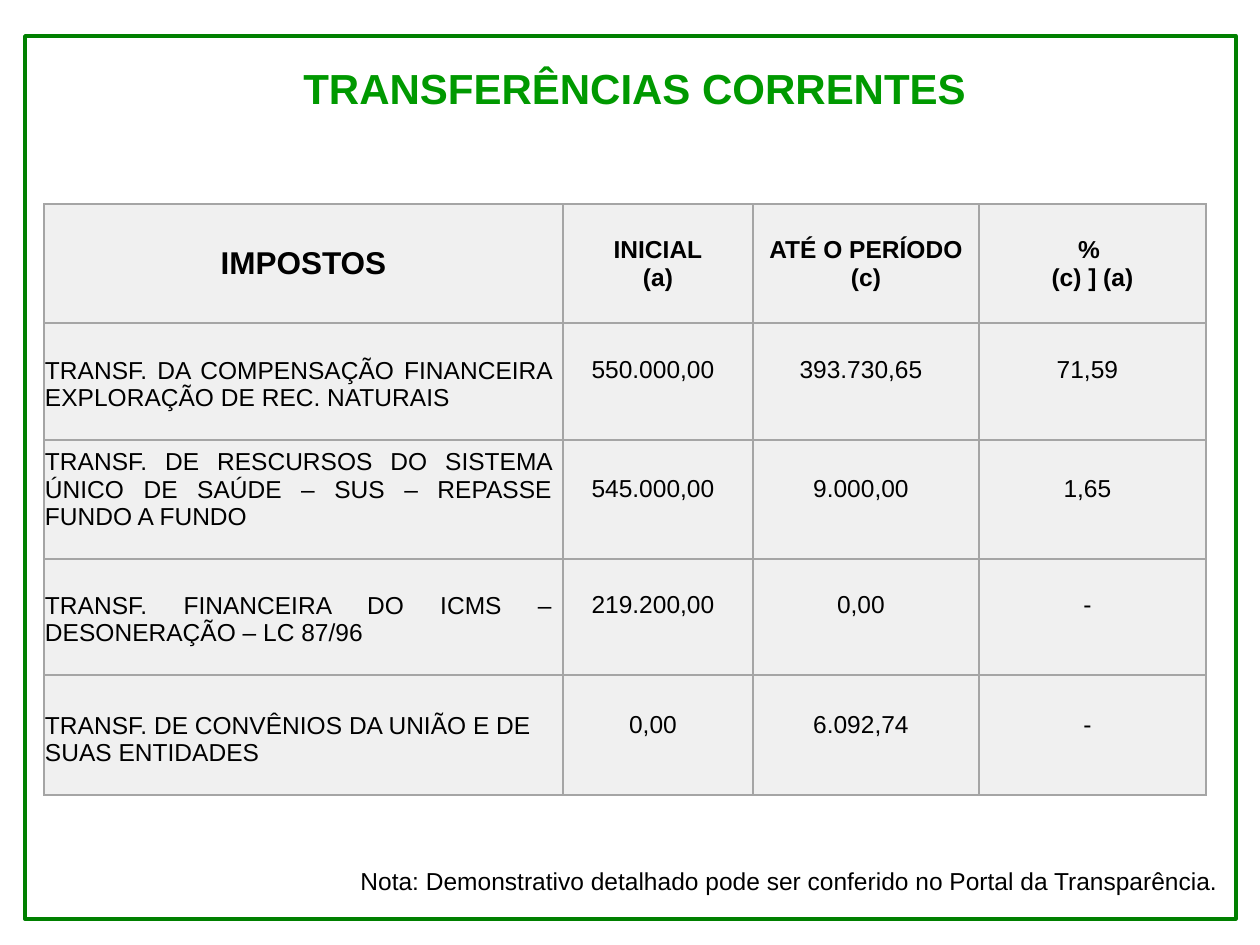
from lxml.etree import SubElement
from pptx import Presentation
from pptx.dml.color import RGBColor
from pptx.enum.shapes import MSO_SHAPE
from pptx.enum.text import MSO_ANCHOR, MSO_AUTO_SIZE, PP_ALIGN
from pptx.oxml.ns import qn
from pptx.util import Emu, Pt

PAGE_WIDTH, PAGE_HEIGHT = 1260, 945
LINE_HEIGHT = 28
COLUMN_WIDTHS = [519, 190, 226, 227]
ROW_HEIGHTS = [119, 117, 119, 116, 120]
HEADERS = ["IMPOSTOS", "INICIAL\n(a)", "ATÉ O PERÍODO (c)", "% \n(c) ] (a)"]
TRANSFERS = [
    ("TRANSF. DA COMPENSAÇÃO FINANCEIRA EXPLORAÇÃO DE REC. NATURAIS",
     "550.000,00", "393.730,65", "71,59"),
    ("TRANSF. DE RESCURSOS DO SISTEMA ÚNICO DE SAÚDE – SUS – REPASSE FUNDO A FUNDO",
     "545.000,00", "9.000,00", "1,65"),
    ("TRANSF. FINANCEIRA DO ICMS – DESONERAÇÃO – LC 87/96",
     "219.200,00", "0,00", "-"),
    ("TRANSF. DE CONVÊNIOS DA UNIÃO E DE SUAS ENTIDADES",
     "0,00", "6.092,74", "-"),
]


def px(length):
    return Emu(round(length * 914400 / 126))


def color(hex_value):
    return RGBColor.from_string(hex_value)


def write(text_frame, text, size, hex_value="000000", bold=False, align=PP_ALIGN.LEFT):
    text_frame.text = text
    for para in text_frame.paragraphs:
        para.alignment = align
        for span in para.runs:
            span.font.name = "Arial"
            span.font.size = Pt(size)
            span.font.bold = bold
            span.font.color.rgb = color(hex_value)


def add_frame(page, left, top, width, height):
    frame = page.shapes.add_shape(
        MSO_SHAPE.RECTANGLE, px(left), px(top), px(width), px(height))
    frame.shadow.inherit = False
    frame.fill.background()
    frame.line.color.rgb = color("008000")
    frame.line.width = Pt(2)


def add_text(page, left, top, width, height, text, size, wrap=True, **style):
    box = page.shapes.add_textbox(px(left), px(top), px(width), px(height))
    box.text_frame.word_wrap = wrap
    box.text_frame.auto_size = MSO_AUTO_SIZE.SHAPE_TO_FIT_TEXT
    write(box.text_frame, text, size, **style)


def add_borders(cell):
    properties = cell._tc.get_or_add_tcPr()
    for side in ("a:lnL", "a:lnR", "a:lnT", "a:lnB"):
        line = SubElement(properties, qn(side), w=str(Pt(1)))
        fill = SubElement(line, qn("a:solidFill"))
        SubElement(fill, qn("a:srgbClr"), val="A5A5A5")


def style_cell(cell, anchor, right, bottom):
    """Set borders, fill, anchor and insets; right and bottom are in px."""
    add_borders(cell)
    cell.fill.solid()
    cell.fill.fore_color.rgb = color("F0F0F0")
    cell.vertical_anchor = anchor
    cell.margin_left = cell.margin_top = px(1)
    cell.margin_right, cell.margin_bottom = px(right), px(bottom)


def add_transfer_table(page, left, top):
    table = page.shapes.add_table(
        len(ROW_HEIGHTS), len(COLUMN_WIDTHS), px(left), px(top),
        px(sum(COLUMN_WIDTHS)), px(sum(ROW_HEIGHTS))).table
    table.first_row = table.horz_banding = False
    for column, width in zip(table.columns, COLUMN_WIDTHS):
        column.width = px(width)
    for row, height in zip(table.rows, ROW_HEIGHTS):
        row.height = px(height)

    for index, header in enumerate(HEADERS):
        cell = table.cell(0, index)
        style_cell(cell, MSO_ANCHOR.MIDDLE, 1, 0)
        write(cell.text_frame, header, 14 if index else 18,
              bold=True, align=PP_ALIGN.CENTER)

    for row_index, transfer in enumerate(TRANSFERS, start=1):
        is_last = row_index == len(TRANSFERS)
        label_align = PP_ALIGN.LEFT if is_last else PP_ALIGN.JUSTIFY
        for index, text in enumerate(transfer):
            cell = table.cell(row_index, index)
            lines_below = 2 if index else 1
            style_cell(cell, MSO_ANCHOR.BOTTOM, 11, lines_below * LINE_HEIGHT)
            write(cell.text_frame, text, 14,
                  align=PP_ALIGN.CENTER if index else label_align)


def main():
    deck = Presentation()
    deck.slide_width, deck.slide_height = px(PAGE_WIDTH), px(PAGE_HEIGHT)
    page = deck.slides.add_slide(deck.slide_layouts[6])
    add_frame(page, 25, 36, 1211, 883)
    add_text(page, 275, 56, 731, 63, "TRANSFERÊNCIAS CORRENTES ", 24, wrap=False,
             hex_value="009900", bold=True, align=PP_ALIGN.CENTER)
    add_transfer_table(page, 44, 204)
    add_text(page, 348, 860, 912, 43,
             "Nota: Demonstrativo detalhado pode ser conferido no Portal da Transparência.", 14)
    deck.save("out.pptx")


if __name__ == "__main__":
    main()
